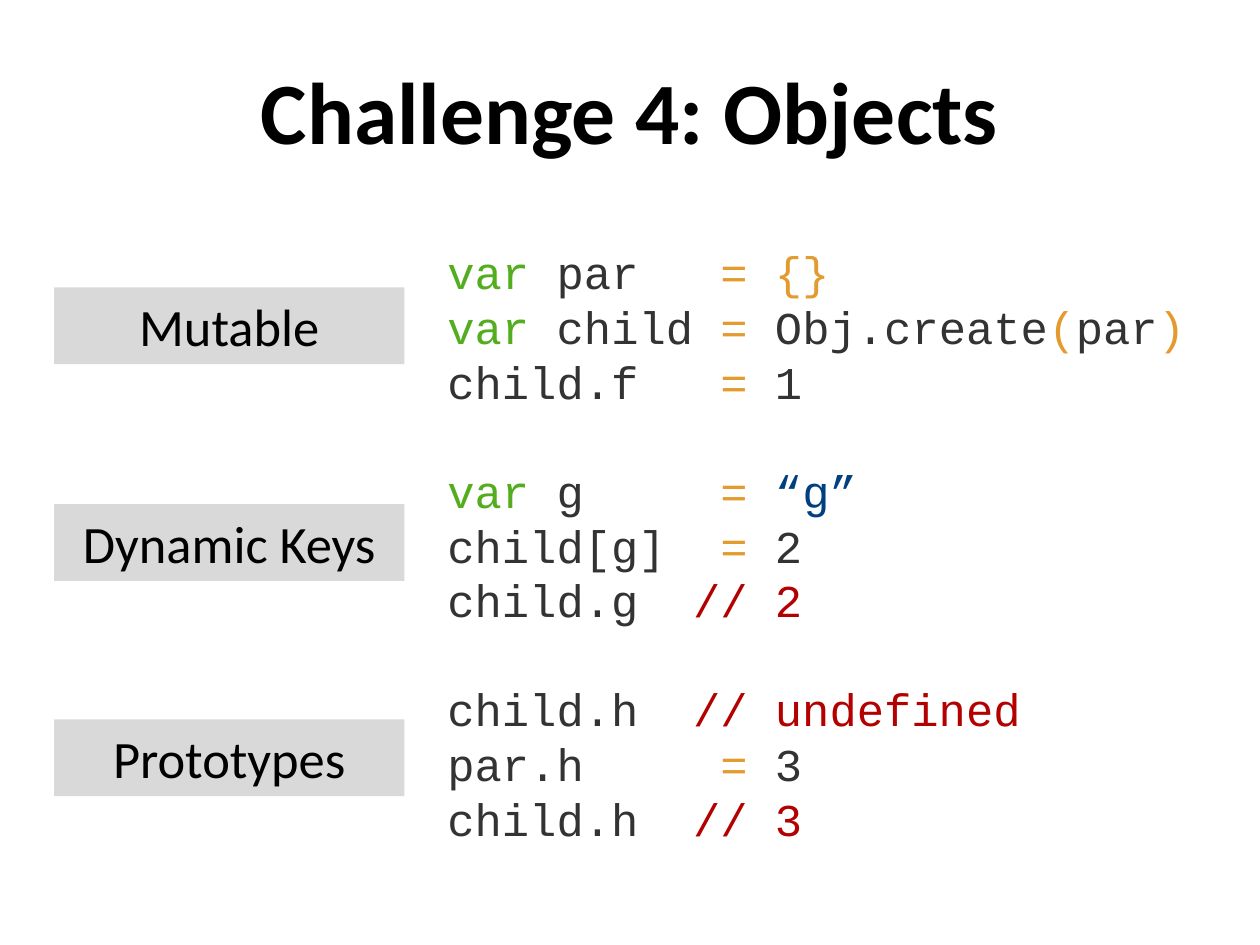
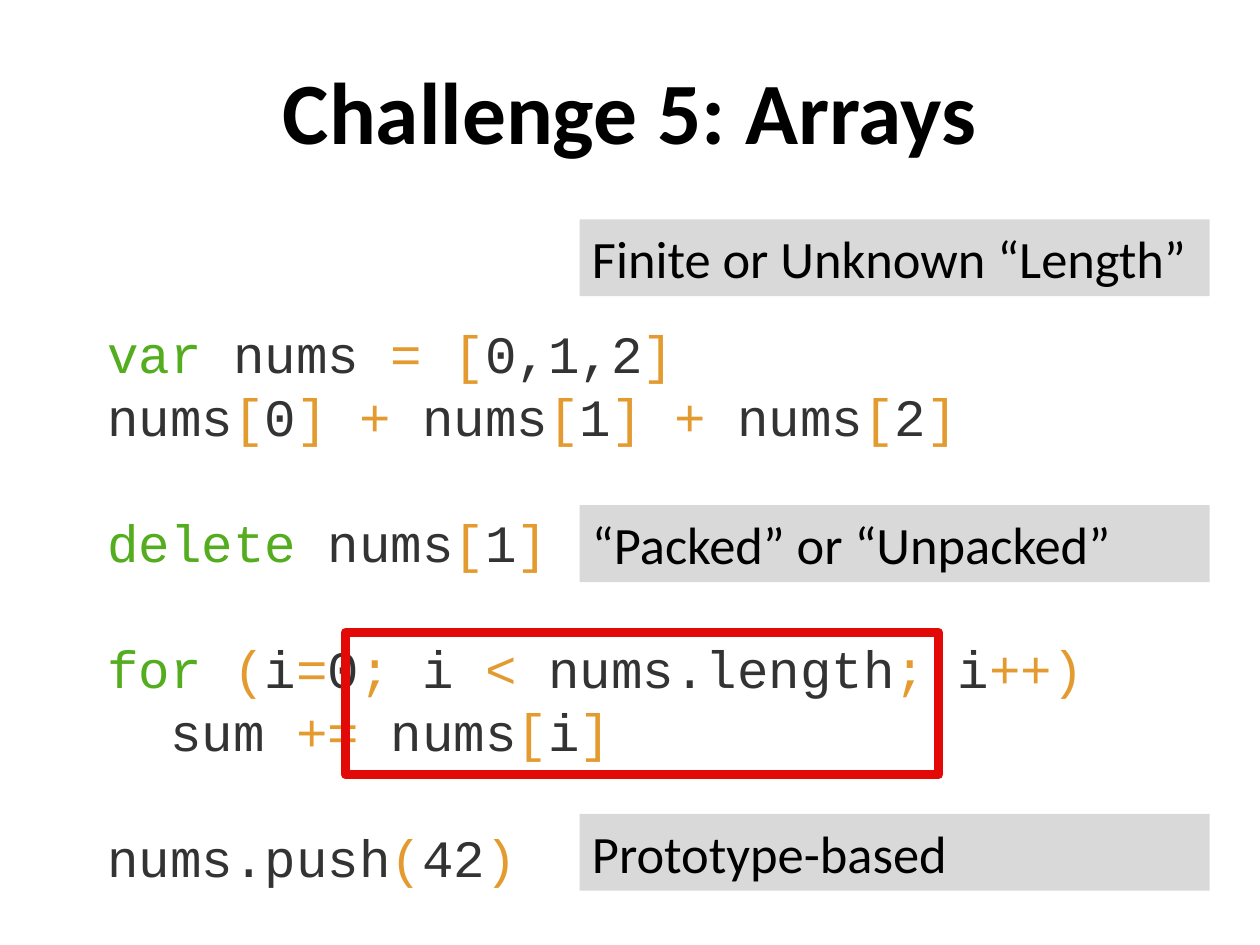
from lxml import etree
from pptx import Presentation
from pptx.dml.color import RGBColor
from pptx.enum import shapes, text
from pptx.oxml import ns
from pptx.util import Inches, Pt

BLACK = RGBColor(0x00, 0x00, 0x00)
LABEL_GREY = RGBColor(0xD9, 0xD9, 0xD9)
HIGHLIGHT_RED = RGBColor(0xE3, 0x09, 0x07)

# Syntax colours of the code listings
KEYWORD = RGBColor(0x53, 0xAD, 0x1F)
PLAIN = RGBColor(0x33, 0x33, 0x33)
OPERATOR = RGBColor(0xE3, 0x9B, 0x30)
STRING = RGBColor(0x00, 0x40, 0x80)
COMMENT = RGBColor(0xB3, 0x00, 0x00)

LABEL_HEIGHT = 0.61
CHAR_WIDTH = 0.6  # advance of one Courier New character, in ems

prs = Presentation()
prs.slide_width, prs.slide_height = Inches(10), Inches(7.5)


def add_run(paragraph, wording, font, size, color, bold=False):
    run = paragraph.add_run()
    run.text = wording
    run.font.name = font
    run.font.size = Pt(size)
    run.font.color.rgb = color
    run.font.bold = bold


def add_code(slide, left, top, width, height, size, blocks):
    """Each block is a group of lines; each line is a list of (colour, text)."""
    listing = slide.shapes.add_textbox(
        Inches(left), Inches(top), Inches(width), Inches(height)).text_frame
    listing.word_wrap = True
    listing.margin_left = listing.margin_right = 0
    listing.margin_top = listing.margin_bottom = 0
    pitch = Pt(size * 1.2)
    em = size / 72
    line = listing.paragraphs[0]
    for block_no, block in enumerate(blocks):
        for line_no, tokens in enumerate(block):
            if block_no or line_no:
                line = listing.add_paragraph()
            line.line_spacing = pitch
            if line_no == 0:
                line.space_before = pitch if block_no else Pt(5)
            props = line._p.get_or_add_pPr()
            # Nested statements sit two characters in
            if tokens[0][1].startswith("sum"):
                props.set("marL", str(Inches(2 * CHAR_WIDTH * em)))
            # Line up "=" in column 10 and "//" in column 9
            if any("\t" in wording for _, wording in tokens):
                column = 9 if tokens[-1][0] == COMMENT else 10
                stops = etree.SubElement(props, ns.qn("a:tabLst"))
                etree.SubElement(stops, ns.qn("a:tab"), algn="l",
                                 pos=str(Inches(column * CHAR_WIDTH * em)))
            for color, wording in tokens:
                add_run(line, wording, "Courier New", size, color)


objects_code = [
    [
        [(KEYWORD, "var "), (PLAIN, "par\t"), (OPERATOR, "= {}")],
        [(KEYWORD, "var "), (PLAIN, "child\t"), (OPERATOR, "= "),
         (PLAIN, "Obj.create"), (OPERATOR, "("), (PLAIN, "par"), (OPERATOR, ")")],
        [(PLAIN, "child.f\t"), (OPERATOR, "= "), (PLAIN, "1")],
    ],
    [
        [(KEYWORD, "var "), (PLAIN, "g\t"), (OPERATOR, "= "), (STRING, "“g”")],
        [(PLAIN, "child[g]\t"), (OPERATOR, "= "), (PLAIN, "2")],
        [(PLAIN, "child.g\t"), (COMMENT, "// 2")],
    ],
    [
        [(PLAIN, "child.h\t"), (COMMENT, "// undefined")],
        [(PLAIN, "par.h\t"), (OPERATOR, "= "), (PLAIN, "3")],
        [(PLAIN, "child.h\t"), (COMMENT, "// 3")],
    ],
]

arrays_code = [
    [
        [(KEYWORD, "var "), (PLAIN, "nums "), (OPERATOR, "= ["),
         (PLAIN, "0,1,2"), (OPERATOR, "]")],
        [(PLAIN, "nums"), (OPERATOR, "["), (PLAIN, "0"), (OPERATOR, "] + "),
         (PLAIN, "nums"), (OPERATOR, "["), (PLAIN, "1"), (OPERATOR, "] + "),
         (PLAIN, "nums"), (OPERATOR, "["), (PLAIN, "2"), (OPERATOR, "]")],
    ],
    [
        [(KEYWORD, "delete"), (PLAIN, " nums"), (OPERATOR, "["),
         (PLAIN, "1"), (OPERATOR, "]")],
    ],
    [
        [(KEYWORD, "for "), (OPERATOR, "("), (PLAIN, "i"), (OPERATOR, "="),
         (PLAIN, "0"), (OPERATOR, "; "), (PLAIN, "i "), (OPERATOR, "< "),
         (PLAIN, "nums.length"), (OPERATOR, "; "), (PLAIN, "i"), (OPERATOR, "++)")],
        [(PLAIN, "sum "), (OPERATOR, "+= "), (PLAIN, "nums"), (OPERATOR, "["),
         (PLAIN, "i"), (OPERATOR, "]")],
    ],
    [
        [(PLAIN, "nums.push"), (OPERATOR, "("), (PLAIN, "42"), (OPERATOR, ")")],
    ],
]

# Title, code box, code size, code, label left, label width, alignment, labels
challenges = [
    ("Challenge 4: Objects", (3.55, 1.94, 6.01, 4.81), 26, objects_code,
     0.43, 2.78, text.PP_ALIGN.CENTER,
     [(2.28, "Mutable"), (4, "Dynamic Keys"), (5.71, "Prototypes")]),
    ("Challenge 5: Arrays", (0.85, 2.55, 8.42, 4.54), 30, arrays_code,
     4.6, 5, text.PP_ALIGN.LEFT,
     [(1.74, "Finite or Unknown “Length”"), (4.01, "“Packed” or “Unpacked”"),
      (6.46, "Prototype-based")]),
]

for heading, code_box, code_size, code, label_left, label_width, align, labels in challenges:
    slide = prs.slides.add_slide(prs.slide_layouts[5])

    # Title
    title = slide.shapes.title
    title.left, title.top = Inches(0), Inches(0.42)
    title.width, title.height = Inches(10), Inches(0.89)
    title.text_frame.vertical_anchor = text.MSO_ANCHOR.MIDDLE
    title_line = title.text_frame.paragraphs[0]
    title_line.alignment = text.PP_ALIGN.CENTER
    add_run(title_line, heading, "Calibri", 50, BLACK, bold=True)

    # Code listing
    add_code(slide, *code_box, code_size, code)

    # Grey labels
    for label_top, wording in labels:
        label = slide.shapes.add_shape(
            shapes.MSO_SHAPE.RECTANGLE, Inches(label_left), Inches(label_top),
            Inches(label_width), Inches(LABEL_HEIGHT))
        label.shadow.inherit = False
        label.fill.solid()
        label.fill.fore_color.rgb = LABEL_GREY
        label.line.fill.background()
        label.text_frame.word_wrap = True
        label.text_frame.vertical_anchor = text.MSO_ANCHOR.MIDDLE
        label_line = label.text_frame.paragraphs[0]
        label_line.alignment = align
        add_run(label_line, wording, "Calibri", 30, BLACK)

# Highlight around the loop bound on the arrays slide
loop_highlight = slide.shapes.add_shape(
    shapes.MSO_SHAPE.RECTANGLE, Inches(2.74), Inches(5.02), Inches(4.71), Inches(1.13))
loop_highlight.shadow.inherit = False
loop_highlight.fill.background()
loop_highlight.line.color.rgb = HIGHLIGHT_RED
loop_highlight.line.width = Pt(5)

prs.save("out.pptx")
